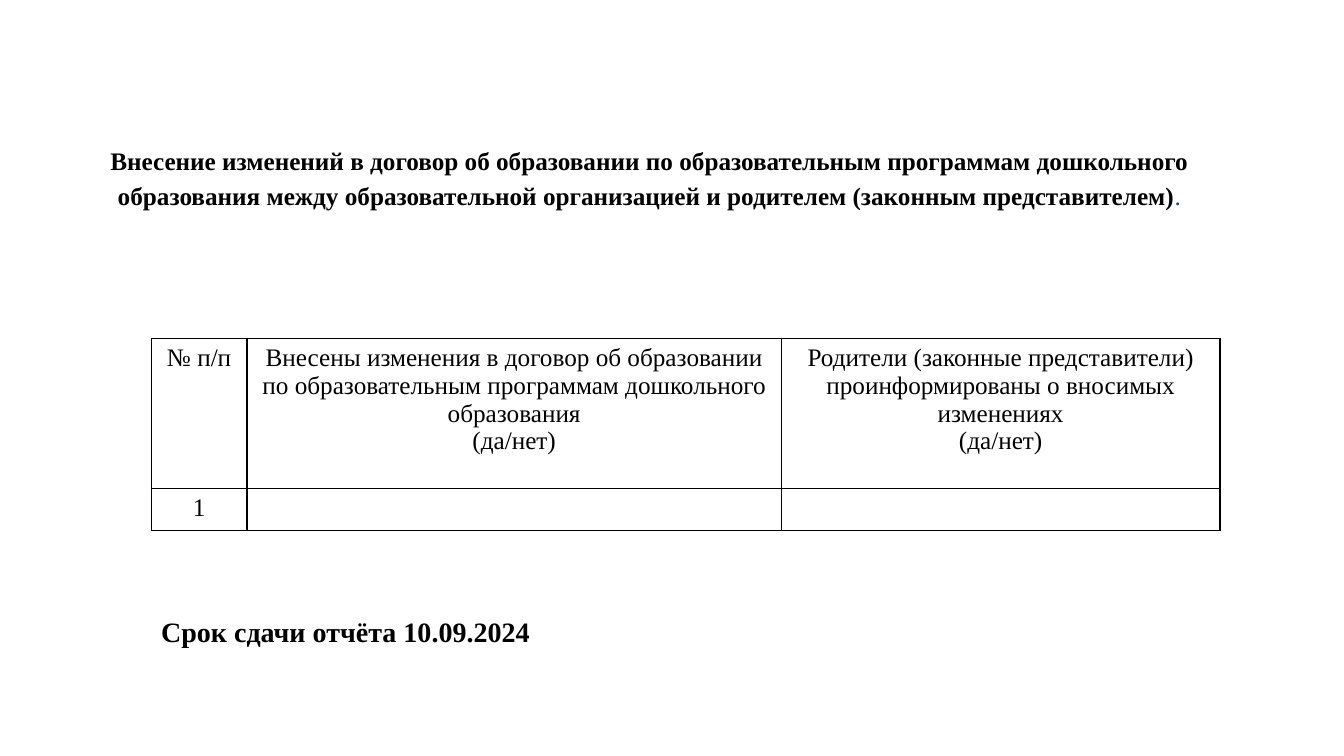
from dataclasses import dataclass

from lxml import etree
from pptx import Presentation
from pptx.dml.color import RGBColor
from pptx.enum import text
from pptx.oxml import ns
from pptx.util import Inches, Pt


@dataclass(frozen=True)
class Theme:
    font: str = "Times New Roman"
    ink: str = "000000"
    accent: str = "26417C"
    body: int = 18
    deadline: int = 20
    border: int = 1


THEME = Theme()

COLUMN_WIDTHS = (0.95, 5.3, 4.35)
ROW_HEIGHTS = (1.49, 0.41)
ROWS = (
    (
        "№ п/п",
        "Внесены изменения в договор об образовании по образовательным "
        "программам дошкольного образования\n(да/нет)",
        "Родители (законные представители) проинформированы о вносимых "
        "изменениях\n(да/нет)",
    ),
    ("1", "", ""),
)


def style_font(font, size, bold=False, color=THEME.ink):
    font.name = THEME.font
    font.size = Pt(size)
    font.bold = bold
    font.color.rgb = RGBColor.from_string(color)


def add_text(slide, left, top, width, height, bottom_inset):
    """Add a wrapped, middle-anchored box and return its first paragraph."""
    box = slide.shapes.add_textbox(
        Inches(left), Inches(top), Inches(width), Inches(height))
    frame = box.text_frame
    frame.word_wrap = True
    frame.vertical_anchor = text.MSO_ANCHOR.MIDDLE
    frame.margin_bottom = Inches(bottom_inset)
    return frame.paragraphs[0]


def add_borders(cell):
    properties = cell._tc.get_or_add_tcPr()
    for index, side in enumerate(("lnL", "lnR", "lnT", "lnB")):
        line = etree.Element(ns.qn(f"a:{side}"), w=str(Pt(THEME.border)))
        fill = etree.SubElement(line, ns.qn("a:solidFill"))
        etree.SubElement(fill, ns.qn("a:srgbClr"), val=THEME.ink)
        properties.insert(index, line)


def fill_cell(cell, content):
    cell.fill.background()
    add_borders(cell)
    cell.text = content
    for paragraph in cell.text_frame.paragraphs:
        paragraph.alignment = text.PP_ALIGN.CENTER
        style_font(paragraph.font, THEME.body)


def add_report_table(slide, left, top):
    table = slide.shapes.add_table(
        len(ROWS), len(COLUMN_WIDTHS), Inches(left), Inches(top),
        Inches(sum(COLUMN_WIDTHS)), Inches(sum(ROW_HEIGHTS))).table
    table.first_row = table.horz_banding = False
    for column, width in zip(table.columns, COLUMN_WIDTHS):
        column.width = Inches(width)
    for row, height, contents in zip(table.rows, ROW_HEIGHTS, ROWS):
        row.height = Inches(height)
        for cell, content in zip(row.cells, contents):
            fill_cell(cell, content)


def main():
    deck = Presentation()
    deck.slide_width, deck.slide_height = Inches(13.33), Inches(7.5)
    slide = deck.slides.add_slide(deck.slide_layouts[6])

    # Heading with a lighter full stop
    heading = add_text(slide, 0.78, 1.11, 11.32, 1.56, bottom_inset=0.35)
    heading.alignment = text.PP_ALIGN.CENTER
    heading.line_spacing = 1.15
    subject = heading.add_run()
    subject.text = (
        "Внесение изменений в договор об образовании по образовательным "
        "программам дошкольного образования между образовательной "
        "организацией и родителем (законным представителем)")
    style_font(subject.font, THEME.body, bold=True)
    full_stop = heading.add_run()
    full_stop.text = "."
    style_font(full_stop.font, THEME.body, color=THEME.accent)

    # Report form
    add_report_table(slide, 1.5, 3.36)

    # Deadline
    deadline = add_text(slide, 1.5, 6.06, 5.33, 0.66, bottom_inset=0.28)
    deadline.line_spacing = 0.95
    deadline.text = "Срок сдачи отчёта 10.09.2024"
    style_font(deadline.font, THEME.deadline, bold=True)

    deck.save("out.pptx")


if __name__ == "__main__":
    main()
